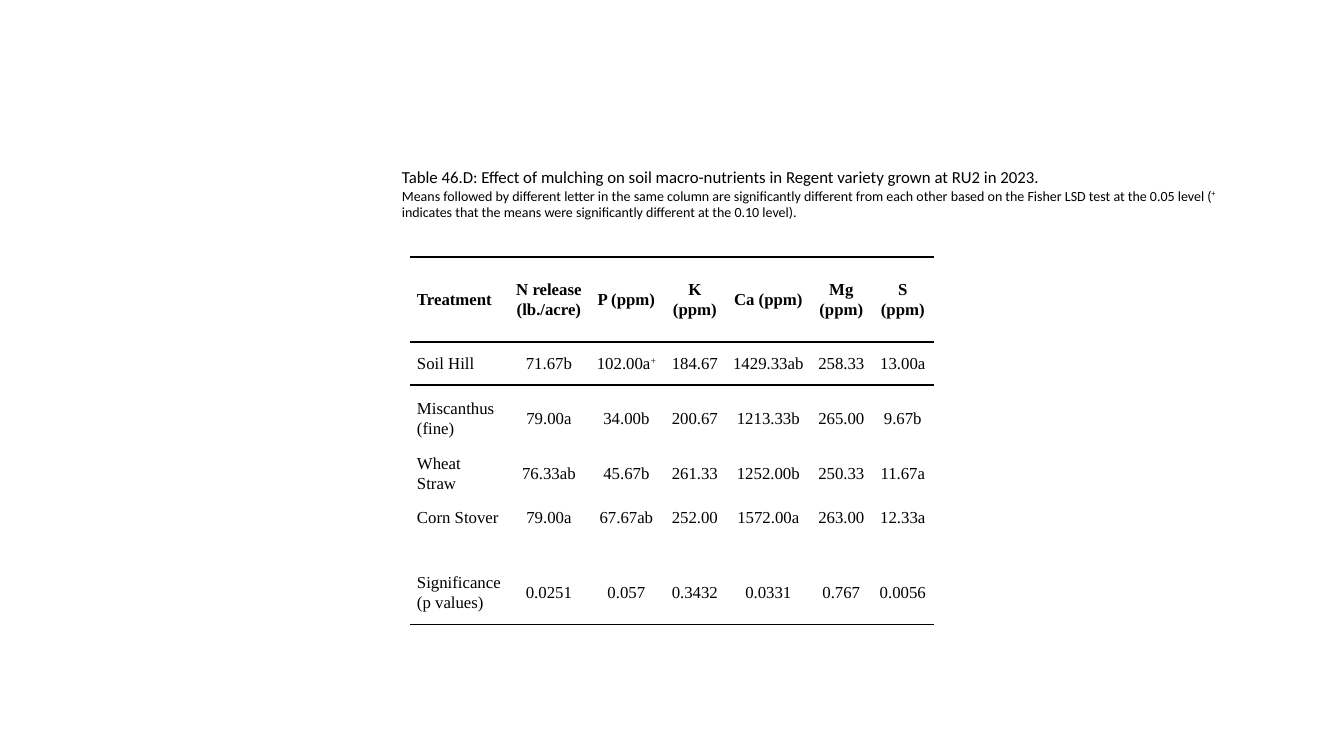
import pptx
import pptx.dml.color
import pptx.enum.text
import pptx.oxml.ns
import pptx.util
from lxml import etree

PX = 914400 / 100.8
BLACK = "000000"
TABLE_FONT = "Times New Roman"
CAPTION_FONT = "Calibri"
NO_STYLE = "{2D5ABB26-0587-4C30-8999-92F81FD0307C}"
COLUMN_WIDTHS = [99, 80, 75, 62, 85, 61, 62]
ROW_HEIGHTS = [85, 43, 66, 44, 44, 21, 65]
SPACER_ROW = 5
RULED_SIDES = {0: ["lnT", "lnB"], 1: ["lnT"], 6: ["lnB"]}
SUPERSCRIPT = "+"
ROWS = [
    ["Treatment", "N release (lb./acre)", "P (ppm)", "K (ppm)", "Ca (ppm)", "Mg (ppm)", "S (ppm)"],
    ["Soil Hill", "71.67b", "102.00a+", "184.67", "1429.33ab", "258.33", "13.00a"],
    ["Miscanthus (fine)", "79.00a", "34.00b", "200.67", "1213.33b", "265.00", "9.67b"],
    ["Wheat Straw", "76.33ab", "45.67b", "261.33", "1252.00b", "250.33", "11.67a"],
    ["Corn Stover", "79.00a", "67.67ab", "252.00", "1572.00a", "263.00", "12.33a"],
    [""] * 7,
    ["Significance (p values)", "0.0251", "0.057", "0.3432", "0.0331", "0.767", "0.0056"],
]
CAPTION = [
    ("Table 46.D: Effect of mulching on soil macro-nutrients in Regent variety grown at RU2 in 2023.", 12),
    ("Means followed by different letter in the same column are significantly different from each other "
     "based on the Fisher LSD test at the 0.05 level (+ indicates that the means were significantly "
     "different at the 0.10 level).", 10),
]


def px(length):
    return pptx.util.Emu(round(length * PX))


def color(value):
    return pptx.dml.color.RGBColor.from_string(value)


def add_run(paragraph, text, font, size, bold=False):
    run = paragraph.add_run()
    run.text = text
    run.font.name = font
    run.font.size = pptx.util.Pt(size)
    run.font.bold = bold
    run.font.color.rgb = color(BLACK)
    return run


def add_marked_text(paragraph, text, font, size, bold=False):
    before, mark, after = text.partition(SUPERSCRIPT)
    add_run(paragraph, before, font, size, bold)
    if mark:
        run = add_run(paragraph, mark, font, size, bold)
        run.font._element.set("baseline", "30000")
    if after:
        add_run(paragraph, after, font, size, bold)


def add_caption(slide):
    shape = slide.shapes.add_textbox(px(392), px(162), px(881), px(95))
    frame = shape.text_frame
    frame.word_wrap = True
    frame.vertical_anchor = pptx.enum.text.MSO_ANCHOR.TOP
    for index, (text, size) in enumerate(CAPTION):
        paragraph = frame.add_paragraph() if index else frame.paragraphs[0]
        add_marked_text(paragraph, text, CAPTION_FONT, size)


def add_border(cell, side):
    properties = cell._tc.get_or_add_tcPr()
    line = etree.SubElement(properties, pptx.oxml.ns.qn(f"a:{side}"), w=str(pptx.util.Pt(1)))
    fill = etree.SubElement(line, pptx.oxml.ns.qn("a:solidFill"))
    etree.SubElement(fill, pptx.oxml.ns.qn("a:srgbClr"), val=BLACK)


def fill_cell(cell, text, row, column):
    for side in RULED_SIDES.get(row, []):
        add_border(cell, side)
    cell.fill.background()
    cell.margin_left = cell.margin_right = px(7)
    cell.margin_top = cell.margin_bottom = 0
    cell.vertical_anchor = pptx.enum.text.MSO_ANCHOR.MIDDLE
    paragraph = cell.text_frame.paragraphs[0]
    if row == SPACER_ROW:
        etree.SubElement(paragraph._p, pptx.oxml.ns.qn("a:endParaRPr"), sz="1000")
        return
    paragraph.line_spacing = 1.07
    if column:
        paragraph.alignment = pptx.enum.text.PP_ALIGN.CENTER
    add_marked_text(paragraph, text, TABLE_FONT, 12, bold=row == 0)


def add_nutrient_table(slide):
    shape = slide.shapes.add_table(
        len(ROWS), len(COLUMN_WIDTHS), px(410), px(257), px(sum(COLUMN_WIDTHS)), px(sum(ROW_HEIGHTS))
    )
    table = shape.table
    table.horz_banding = False
    table._tbl.tblPr.find(pptx.oxml.ns.qn("a:tableStyleId")).text = NO_STYLE
    for column, width in zip(table.columns, COLUMN_WIDTHS):
        column.width = px(width)
    for row, height in zip(table.rows, ROW_HEIGHTS):
        row.height = px(height)
    for row, texts in enumerate(ROWS):
        for column, text in enumerate(texts):
            fill_cell(table.cell(row, column), text, row, column)


def main():
    presentation = pptx.Presentation()
    presentation.slide_width = px(1344)
    presentation.slide_height = px(756)
    slide = presentation.slides.add_slide(presentation.slide_layouts[6])
    add_nutrient_table(slide)
    add_caption(slide)
    presentation.save("out.pptx")


if __name__ == "__main__":
    main()
